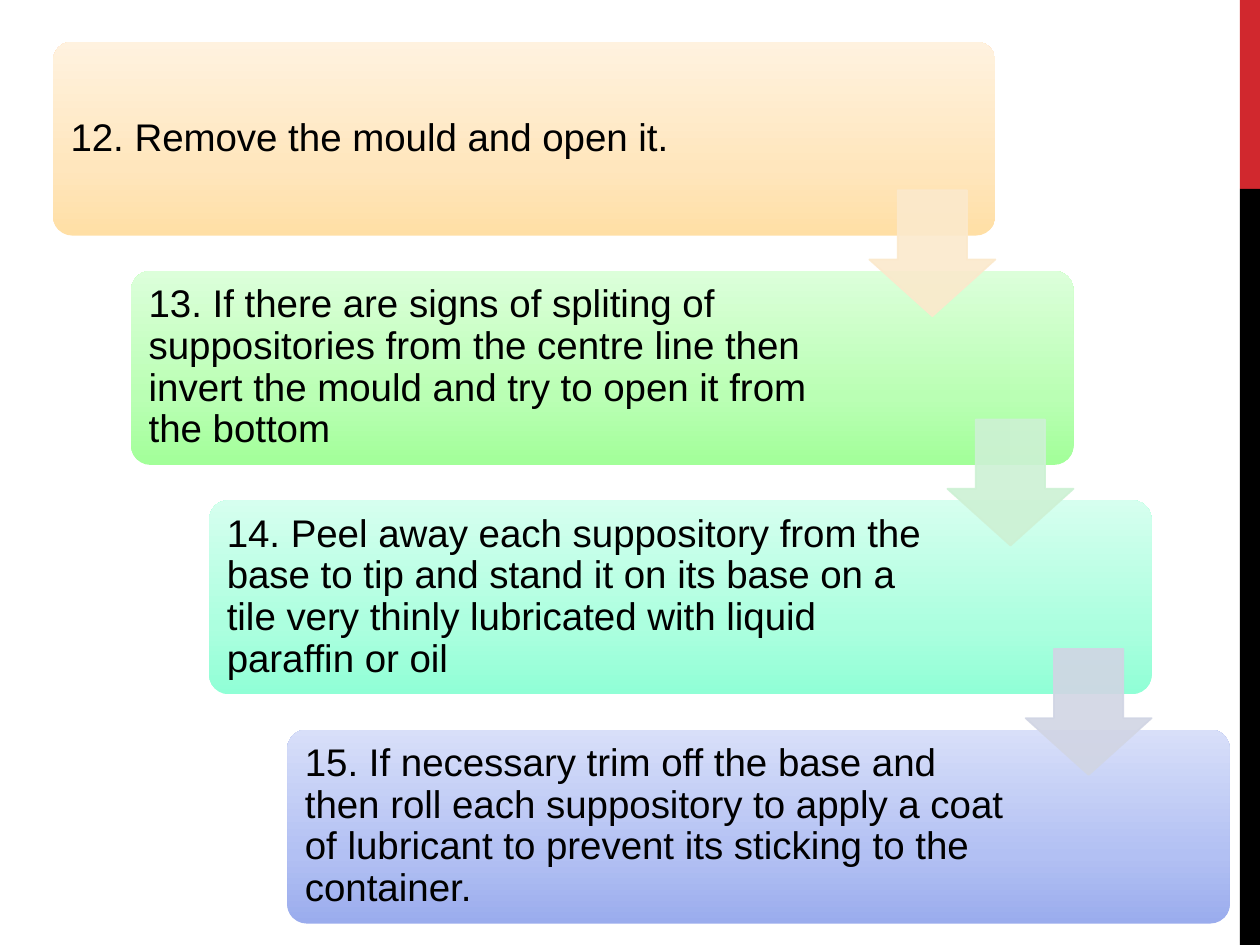
from copy import deepcopy

from lxml.etree import SubElement
from pptx import Presentation
from pptx.dml.color import RGBColor
from pptx.enum.shapes import MSO_SHAPE
from pptx.enum.text import MSO_ANCHOR, PP_ALIGN
from pptx.oxml.ns import qn
from pptx.util import Inches, Pt

# Step text, gradient from bottom to top, colour of the arrow to the next step
STEPS = [
    ("12. Remove the mould and open it.",
     ("FFDFA5", "FFE6BD", "FFF2DF"), "FBE9CC"),
    ("13. If there are signs of spliting of suppositories from the centre line "
     "then invert the mould and try to open it from the bottom",
     ("A2FF99", "BAFFB4", "DCFFDA"), "CDF1D4"),
    ("14. Peel away each suppository from the base to tip and stand it on its "
     "base on a tile very thinly lubricated with liquid paraffin or oil",
     ("90FFD6", "ACFFDF", "D6FFEF"), "D1D5E4"),
    ("15. If necessary trim off the base and then roll each suppository to apply "
     "a coat of lubricant to prevent its sticking to the container.",
     ("9AACED", "B2C0F3", "D8DFF9"), None),
]
GRADIENT_POSITIONS = (0, 0.35, 1)
STEP_WIDTH, STEP_HEIGHT = 7.48, 1.54
SHIFT_X, SHIFT_Y = 0.62, 1.82
TEXT_WIDTH, TEXT_INSET = 5.77, 0.05
ARROW_SIZE = 1
TEXT_FORMAT = {"name": "Arial", "size": Pt(22)}
FRAME_FORMAT = {
    "word_wrap": True, "vertical_anchor": MSO_ANCHOR.MIDDLE,
    "margin_left": Inches(0.09), "margin_right": Inches(0.09),
    "margin_top": Inches(0.09), "margin_bottom": Inches(0.09),
}


def color(hex_value):
    return RGBColor.from_string(hex_value)


def apply_format(target, values):
    for name, value in values.items():
        setattr(target, name, value)


def add_plain_shape(slide, kind, left, top, width, height):
    shape = slide.shapes.add_shape(
        kind, Inches(left), Inches(top), Inches(width), Inches(height))
    shape.shadow.inherit = False
    shape.line.fill.background()
    return shape


def fill_gradient(shape, hex_values):
    shape.fill.gradient()
    shape.fill.gradient_angle = 90
    stop_list = shape._element.spPr.find(qn("a:gradFill")).find(qn("a:gsLst"))
    stop_list.append(deepcopy(stop_list[-1]))
    for stop, position, value in zip(
            shape.fill.gradient_stops, GRADIENT_POSITIONS, hex_values):
        stop.position = position
        stop.color.rgb = color(value)


def add_side_bar(slide, left, top, width, height):
    red_height = height / 5
    parts = [(top, red_height, "D1282E"),
             (top + red_height, height - red_height, "000000")]
    for part_top, part_height, value in parts:
        part = add_plain_shape(
            slide, MSO_SHAPE.RECTANGLE, left, part_top, width, part_height)
        part.fill.solid()
        part.fill.fore_color.rgb = color(value)


def add_step(slide, left, top, width, height, text, hex_values):
    card = add_plain_shape(
        slide, MSO_SHAPE.ROUNDED_RECTANGLE, left, top, width, height)
    card.adjustments[0] = 0.1
    fill_gradient(card, hex_values)

    # The text keeps clear of the arrows at the right
    label = slide.shapes.add_textbox(
        Inches(left + TEXT_INSET), Inches(top + TEXT_INSET),
        Inches(TEXT_WIDTH), Inches(height - 2 * TEXT_INSET))
    apply_format(label.text_frame, FRAME_FORMAT)
    paragraph = label.text_frame.paragraphs[0]
    paragraph.text = text
    apply_format(paragraph, {"line_spacing": 0.9, "alignment": PP_ALIGN.LEFT})
    font = paragraph.runs[0].font
    apply_format(font, TEXT_FORMAT)
    font.color.rgb = color("000000")


def add_arrow(slide, left, top, size, hex_value):
    arrow = add_plain_shape(slide, MSO_SHAPE.DOWN_ARROW, left, top, size, size)
    arrow.adjustments[0] = 0.55
    arrow.adjustments[1] = 0.45
    for fill in (arrow.fill, arrow.line.fill):
        fill.solid()
        fill.fore_color.rgb = color(hex_value)
    arrow.line.width = Pt(1)
    # Fill and outline are 90 % opaque
    for paint in arrow._element.spPr.iter(qn("a:srgbClr")):
        SubElement(paint, qn("a:alpha")).set("val", "90000")


def add_staircase(slide, left, top):
    places = [(left + i * SHIFT_X, top + i * SHIFT_Y) for i in range(len(STEPS))]
    for (step_left, step_top), (text, hex_values, _) in zip(places, STEPS):
        add_step(slide, step_left, step_top, STEP_WIDTH, STEP_HEIGHT,
                 text, hex_values)
    # Arrows lie over the steps, flush with each step's right edge
    for (step_left, step_top), (_, _, arrow_color) in zip(places, STEPS):
        if arrow_color:
            add_arrow(slide, step_left + STEP_WIDTH - ARROW_SIZE,
                      step_top + 1.18, ARROW_SIZE, arrow_color)


def main():
    presentation = Presentation()
    presentation.slide_width = Inches(10)
    presentation.slide_height = Inches(7.5)
    slide = presentation.slides.add_slide(presentation.slide_layouts[6])
    add_side_bar(slide, 9.84, 0, 0.16, 7.5)
    add_staircase(slide, 0.42, 0.33)
    presentation.save("out.pptx")


if __name__ == "__main__":
    main()
